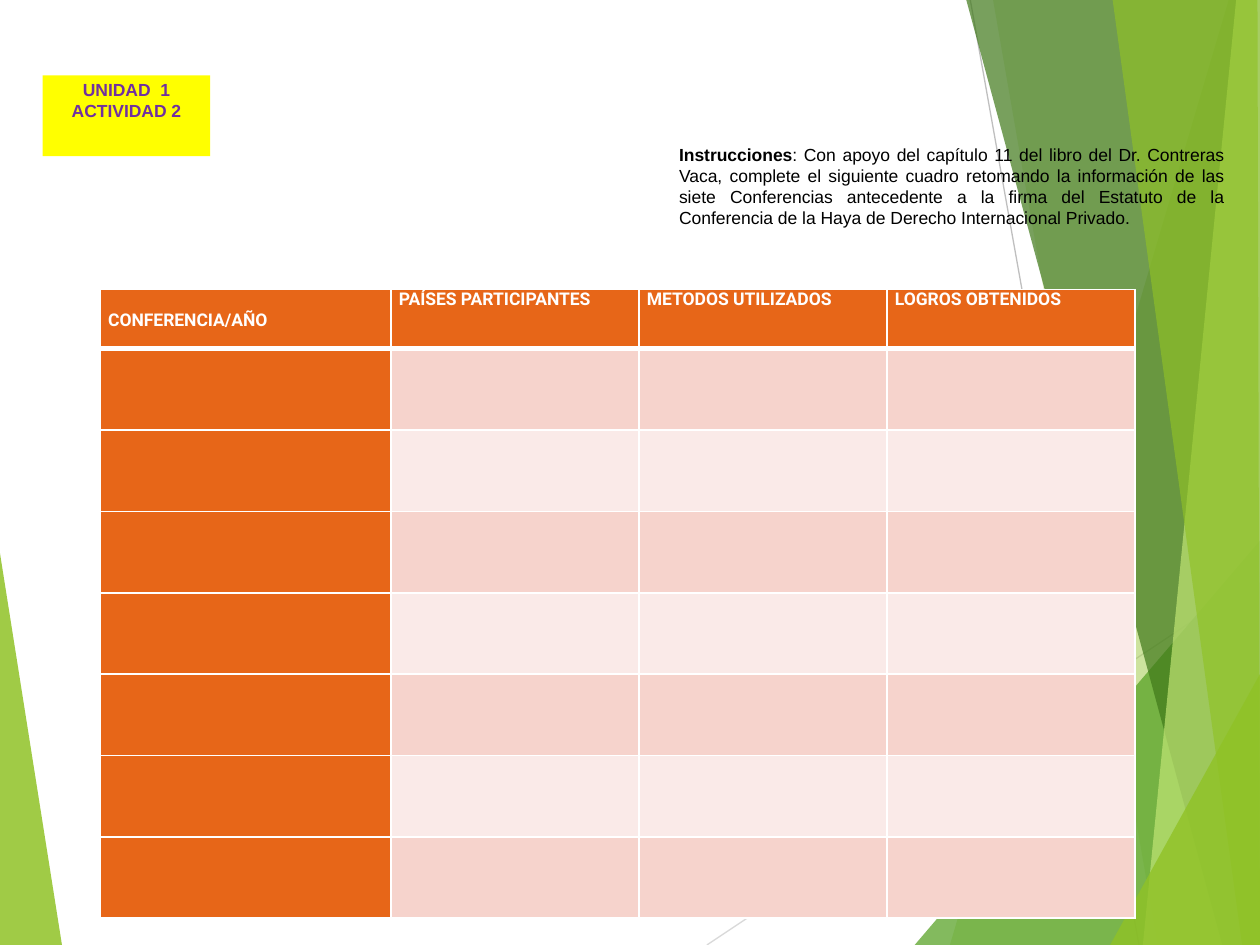
from lxml.etree import SubElement
from pptx import Presentation
from pptx.dml.color import RGBColor
from pptx.enum.shapes import MSO_CONNECTOR, MSO_SHAPE
from pptx.enum.text import MSO_ANCHOR, PP_ALIGN
from pptx.oxml.ns import qn
from pptx.util import Cm, Pt

W, H = 25.4, 19.05

WHITE = RGBColor(0xFF, 0xFF, 0xFF)
BLACK = RGBColor(0, 0, 0)
YELLOW = RGBColor(0xFF, 0xFF, 0)
PURPLE = RGBColor(0x70, 0x30, 0xA0)
ORANGE = RGBColor(0xE7, 0x66, 0x18)
PINK = RGBColor(0xF6, 0xD3, 0xCC)
PALE_PINK = RGBColor(0xFA, 0xEA, 0xE8)
LIME = RGBColor(0x90, 0xC2, 0x26)
GREEN = RGBColor(0x54, 0xA0, 0x21)
DARK_GREEN = RGBColor(0x3F, 0x78, 0x19)
LIGHT_LIME = RGBColor(0xC0, 0xE4, 0x74)
GREY = RGBColor(0xBF, 0xBF, 0xBF)
LIGHT_GREY = RGBColor(0xD9, 0xD9, 0xD9)

LEFT_FACET = ([(0, 11.15), (1.25, H), (0, H)], LIME, 85)
RIGHT_FACETS = [
    ([(24.77, 0), (19.15, H), (W, H), (W, 0)], LIME, 30),
    ([(20.02, 0), (23.34, H), (W, H), (W, 0)], LIME, 20),
    ([(18.44, H), (W, 10.9), (W, H)], GREEN, 72),
    ([(19.48, 0), (24.64, H), (W, H), (W, 0)], DARK_GREEN, 70),
    ([(24.92, 0), (23.04, H), (W, H), (W, 0)], LIGHT_LIME, 70),
    ([(22.43, 0), (25.04, H), (W, H), (25.35, 0)], LIME, 65),
    ([(22.38, H), (W, 13.59), (W, H)], LIME, 80),
]

HEADERS = ["CONFERENCIA/AÑO", "PAÍSES PARTICIPANTES",
           "METODOS UTILIZADOS", "LOGROS OBTENIDOS"]
CONFERENCES = 7
INSTRUCTIONS = (
    ": Con apoyo del capítulo 11 del libro del Dr. Contreras Vaca, complete el "
    "siguiente cuadro retomando la información de las siete Conferencias "
    "antecedente a la firma del Estatuto de la Conferencia de la Haya de "
    "Derecho Internacional Privado.")


def set_font(p, name, color, bold=None):
    p.font.name = name
    p.font.size = Pt(10)
    p.font.bold = bold
    p.font.color.rgb = color


def add_facet(s, points, color, opacity):
    """Add a translucent polygon; opacity is in percent."""
    corners = [(Cm(x), Cm(y)) for x, y in points]
    builder = s.shapes.build_freeform(*corners[0])
    builder.add_line_segments(corners[1:])
    sp = builder.convert_to_shape()
    sp.shadow.inherit = False
    sp.line.fill.background()
    sp.fill.solid()
    sp.fill.fore_color.rgb = color
    clr = sp.fill._xPr.find(qn("a:solidFill"))[0]
    SubElement(clr, qn("a:alpha"), val=str(opacity * 1000))


def add_thin_line(s, x1, y1, x2, y2, color):
    line = s.shapes.add_connector(MSO_CONNECTOR.STRAIGHT,
                                  Cm(x1), Cm(y1), Cm(x2), Cm(y2))
    line.line.color.rgb = color
    line.line.width = Pt(0.75)
    SubElement(line._element.spPr, qn("a:effectLst"))


def add_background(s):
    add_facet(s, *LEFT_FACET)
    add_thin_line(s, 14.25, H, W, 11.61, LIGHT_GREY)
    add_thin_line(s, 19.56, 0, 22.96, H, GREY)
    for facet in RIGHT_FACETS:
        add_facet(s, *facet)


def format_cell(cell, color, top=1, bottom=1):
    """Fill a cell and give it white borders, with widths in points."""
    tcPr = cell._tc.get_or_add_tcPr()
    for tag, width in (("lnL", 1), ("lnR", 1), ("lnT", top), ("lnB", bottom)):
        ln = SubElement(tcPr, qn(f"a:{tag}"), w=str(Pt(width)))
        fill = SubElement(ln, qn("a:solidFill"))
        SubElement(fill, qn("a:srgbClr"), val=str(WHITE))
    cell.fill.solid()
    cell.fill.fore_color.rgb = color


def add_conference_table(s):
    widths, header_height, row_height = [5.86, 5, 5, 5], 1.19, 1.64
    table = s.shapes.add_table(
        CONFERENCES + 1, len(HEADERS), Cm(2.02), Cm(5.84), Cm(sum(widths)),
        Cm(header_height + CONFERENCES * row_height)).table
    for column, width in zip(table.columns, widths):
        column.width = Cm(width)
    for i, row in enumerate(table.rows):
        row.height = Cm(row_height if i else header_height)
        for j, cell in enumerate(row.cells):
            body = PINK if i % 2 else PALE_PINK
            format_cell(cell, body if i and j else ORANGE,
                        top=3 if i == 1 else 1, bottom=1 if i else 3)
    for j, header in enumerate(HEADERS):
        cell = table.cell(0, j)
        cell.margin_left = cell.margin_right = Cm(0.16)
        cell.margin_top = Cm(0 if j else 0.41)
        cell.margin_bottom = 0
        cell.text = header
        set_font(cell.text_frame.paragraphs[0], "Roboto", WHITE, bold=True)


def add_activity_label(s):
    sp = s.shapes.add_shape(MSO_SHAPE.RECTANGLE,
                            Cm(0.86), Cm(1.52), Cm(3.38), Cm(1.63))
    sp.shadow.inherit = False
    sp.fill.solid()
    sp.fill.fore_color.rgb = YELLOW
    sp.line.fill.background()
    tf = sp.text_frame
    tf.vertical_anchor = MSO_ANCHOR.TOP
    tf.margin_left = tf.margin_right = Cm(0.16)
    tf.margin_top = tf.margin_bottom = Cm(0.08)
    tf.text = "UNIDAD  1\nACTIVIDAD 2"
    for p in tf.paragraphs:
        p.alignment = PP_ALIGN.CENTER
        set_font(p, "Arial", PURPLE, bold=True)


def add_instructions(s):
    tf = s.shapes.add_textbox(Cm(13.44), Cm(2.77), Cm(11.48), Cm(1.96)).text_frame
    tf.word_wrap = True
    p = tf.paragraphs[0]
    p.alignment = PP_ALIGN.JUSTIFY
    set_font(p, "Arial", BLACK)
    r = p.add_run()
    r.text = "Instrucciones"
    r.font.bold = True
    p.add_run().text = INSTRUCTIONS


def main():
    prs = Presentation()
    prs.slide_width, prs.slide_height = Cm(W), Cm(H)
    s = prs.slides.add_slide(prs.slide_layouts[6])
    add_background(s)
    add_conference_table(s)
    add_activity_label(s)
    add_instructions(s)
    prs.save("out.pptx")


if __name__ == "__main__":
    main()
